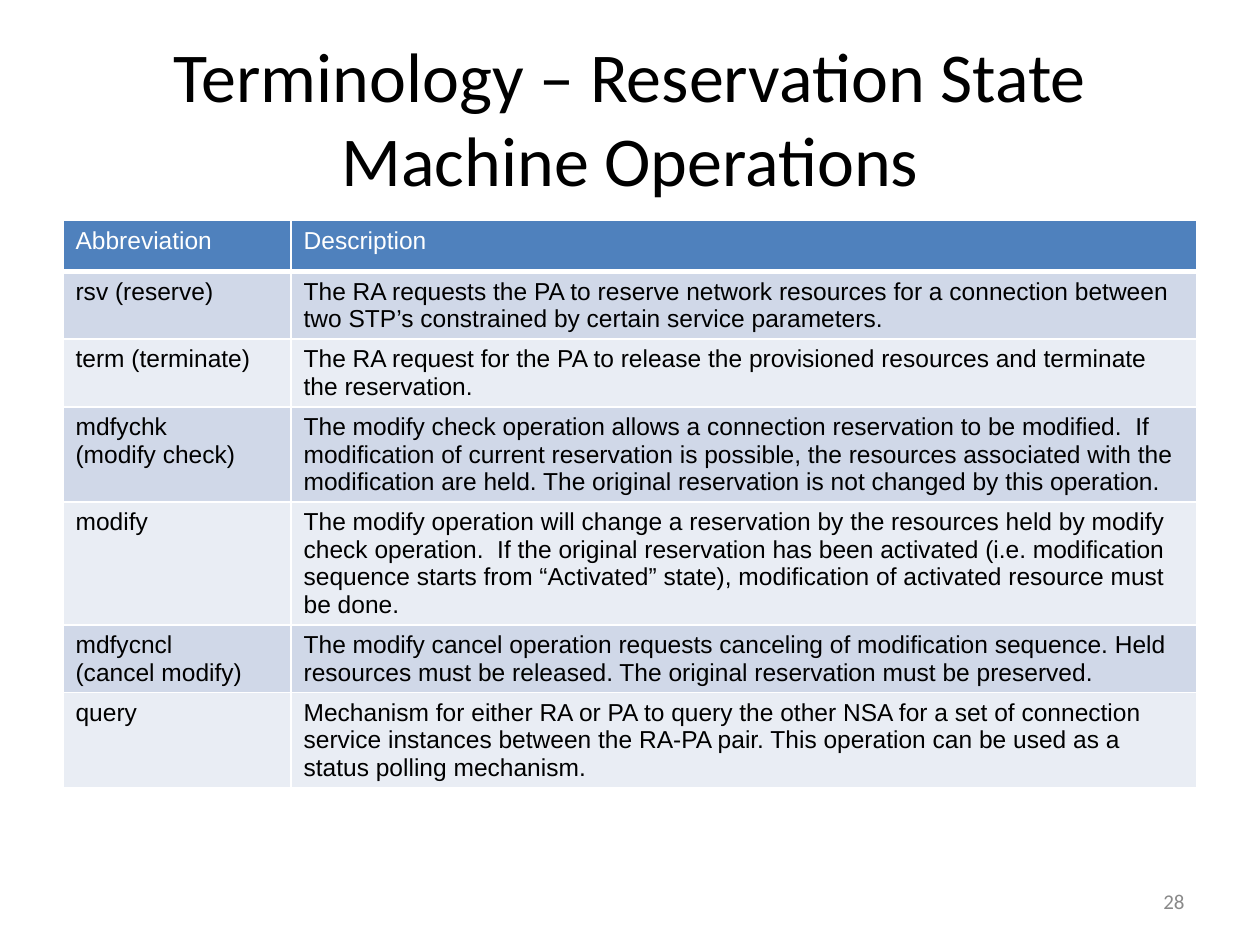
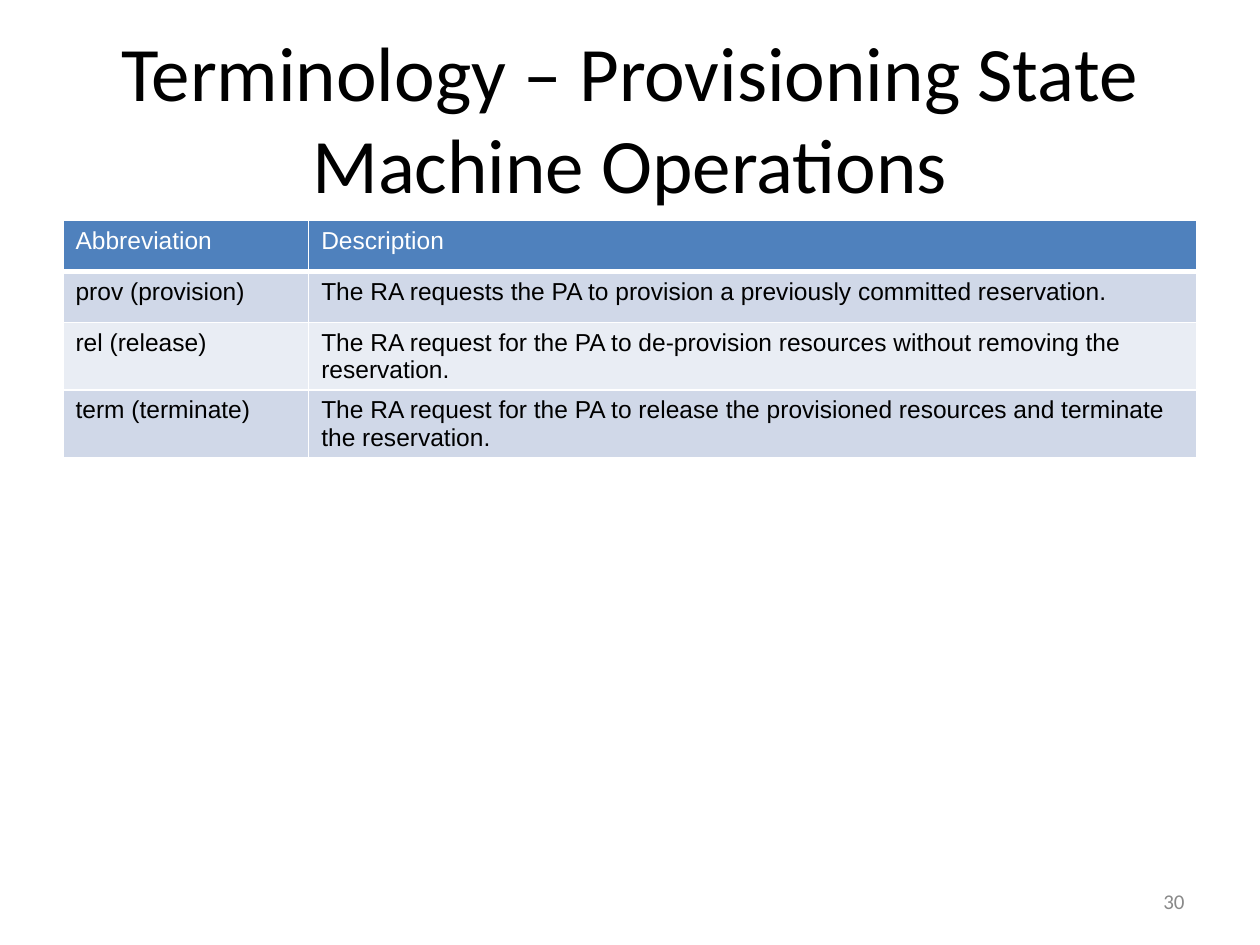
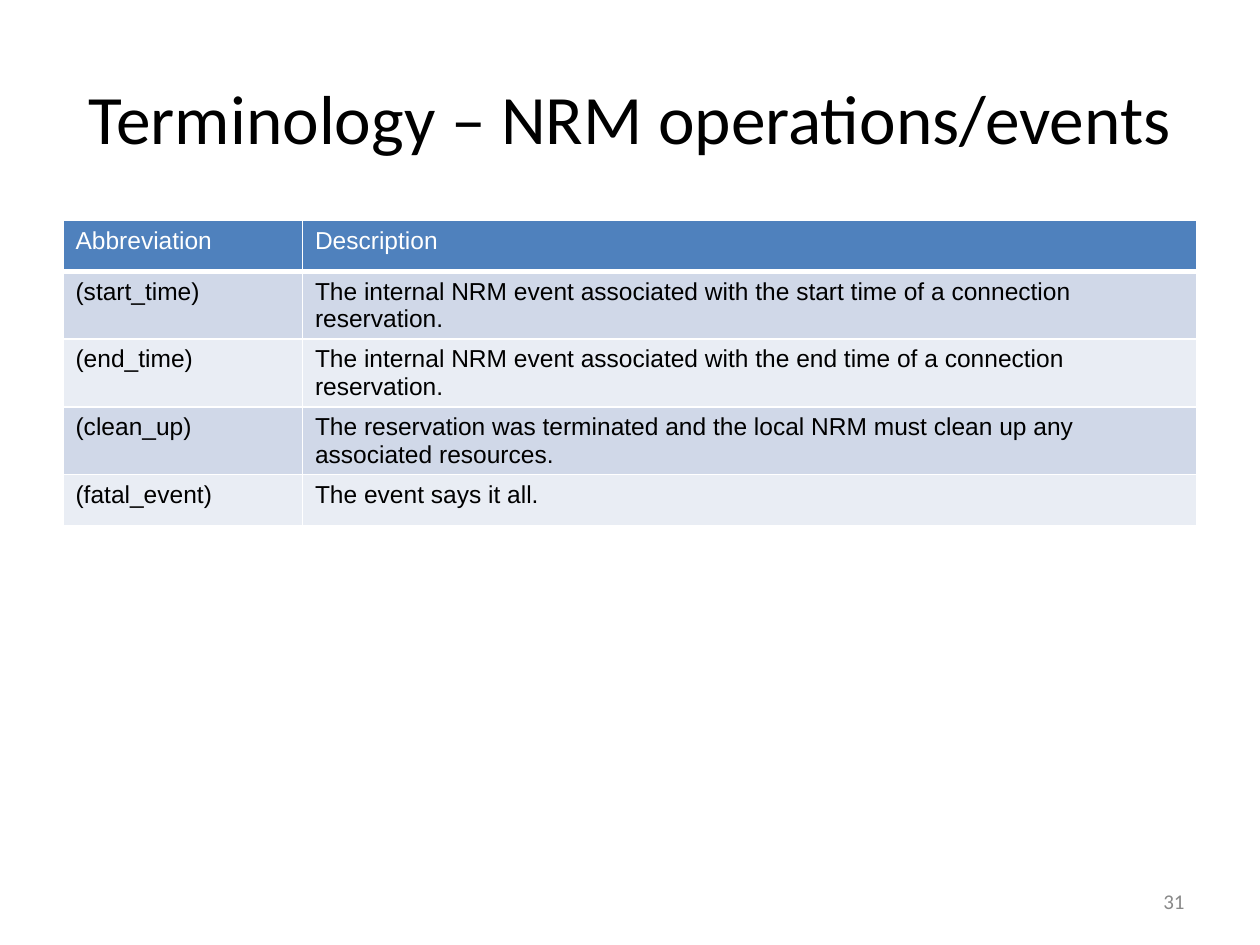
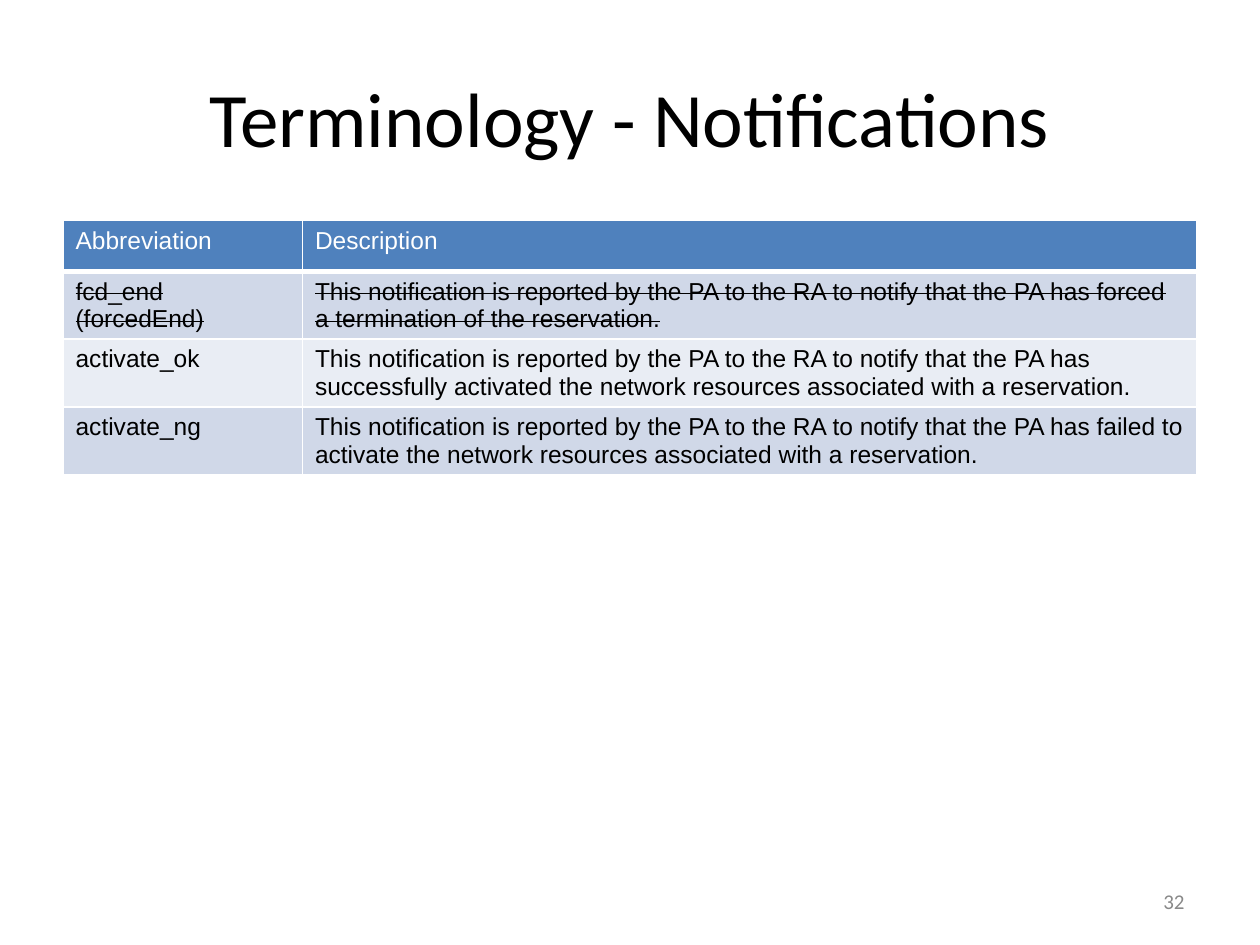
from lxml.etree import SubElement
from pptx import Presentation
from pptx.dml.color import RGBColor
from pptx.enum.text import MSO_ANCHOR, MSO_AUTO_SIZE, PP_ALIGN
from pptx.oxml.ns import qn
from pptx.util import Inches, Pt

COLORS = {
    "text": "000000",
    "white": "FFFFFF",
    "header": "4F81BD",
    "odd_row": "D0D8E8",
    "even_row": "E9EDF4",
    "page_number": "898989",
}
TABLE_WIDTH = 9
ROW_HEIGHT = 0.405
HEADINGS = ("Abbreviation", "Description")
TERMINATE = (
    "term (terminate)",
    "The RA request for the PA to release the provisioned resources and terminate the reservation.",
)

SECTIONS = [
    {
        "title": "Terminology – Reservation State Machine Operations",
        "title_size": 40,
        "page": "28",
        "term_width": 1.81,
        "terms": [
            ("rsv (reserve)",
             "The RA requests the PA to reserve network resources for a connection between two STP’s constrained by certain service parameters."),
            TERMINATE,
            ("mdfychk\n(modify check)",
             "The modify check operation allows a connection reservation to be modified.  If modification of current reservation is possible, the resources associated with the modification are held. The original reservation is not changed by this operation."),
            ("modify",
             "The modify operation will change a reservation by the resources held by modify check operation.  If the original reservation has been activated (i.e. modification sequence starts from “Activated” state), modification of activated resource must be done."),
            ("mdfycncl\n(cancel modify)",
             "The modify cancel operation requests canceling of modification sequence. Held resources must be released. The original reservation must be preserved."),
            ("query",
             "Mechanism for either RA or PA to query the other NSA for a set of connection service instances between the RA-PA pair. This operation can be used as a status polling mechanism."),
        ],
    },
    {
        "title": "Terminology – Provisioning State Machine Operations",
        "title_size": 44,
        "page": "30",
        "term_width": 1.95,
        "terms": [
            ("prov (provision)",
             "The RA requests the PA to provision a previously committed reservation."),
            ("rel (release)",
             "The RA request for the PA to de-provision resources without removing the reservation."),
            TERMINATE,
        ],
    },
    {
        "title": "Terminology – NRM operations/events",
        "title_size": 39.6,
        "page": "31",
        "term_width": 1.9,
        "terms": [
            ("(start_time)",
             "The internal NRM event associated with the start time of a connection reservation."),
            ("(end_time)",
             "The internal NRM event associated with the end time of a connection reservation."),
            ("(clean_up)",
             "The reservation was terminated and the local NRM must clean up any associated resources."),
            ("(fatal_event)", "The event says it all."),
        ],
    },
    {
        "title": "Terminology - Notifications",
        "title_size": 44,
        "page": "32",
        "term_width": 1.9,
        "withdrawn": {"fcd_end (forcedEnd)"},
        "terms": [
            ("fcd_end (forcedEnd)",
             "This notification is reported by the PA to the RA to notify that the PA has forced a termination of the reservation."),
            ("activate_ok",
             "This notification is reported by the PA to the RA to notify that the PA has successfully activated the network resources associated with a reservation."),
            ("activate_ng",
             "This notification is reported by the PA to the RA to notify that the PA has failed to activate the network resources associated with a reservation."),
        ],
    },
]


def write(frame, text, size=14, font="Arial", color="text", align=PP_ALIGN.LEFT, strike=False):
    frame.text = text
    for paragraph in frame.paragraphs:
        paragraph.alignment = align
        for run in paragraph.runs:
            run.font.name = font
            run.font.size = Pt(size)
            run.font.bold = False
            run.font.color.rgb = RGBColor.from_string(COLORS[color])
            if strike:
                run.font._element.set("strike", "sngStrike")


def style_cell(cell, fill, bottom_width):
    properties = cell._tc.get_or_add_tcPr()
    for side, width in (("L", 1), ("R", 1), ("T", 1), ("B", bottom_width)):
        border = SubElement(properties, qn(f"a:ln{side}"), w=str(Pt(width)))
        border_fill = SubElement(border, qn("a:solidFill"))
        SubElement(border_fill, qn("a:srgbClr"), val=COLORS["white"])
    cell.fill.solid()
    cell.fill.fore_color.rgb = RGBColor.from_string(COLORS[fill])


deck = Presentation()
deck.slide_width = Inches(10)
deck.slide_height = Inches(7.5)
title_only = deck.slide_layouts[5]

for section in SECTIONS:
    slide = deck.slides.add_slide(title_only)

    title = slide.shapes.title
    title.left, title.top = Inches(0.5), Inches(0.3)
    title.width, title.height = Inches(9), Inches(1.25)
    title.text_frame.auto_size = MSO_AUTO_SIZE.NONE
    title.text_frame.vertical_anchor = MSO_ANCHOR.MIDDLE
    write(title.text_frame, section["title"], size=section["title_size"],
          font="Calibri", align=PP_ALIGN.CENTER)

    entries = [HEADINGS] + section["terms"]
    glossary = slide.shapes.add_table(
        len(entries), 2, Inches(0.5), Inches(1.75),
        Inches(TABLE_WIDTH), Inches(ROW_HEIGHT * len(entries))).table
    glossary.columns[0].width = Inches(section["term_width"])
    glossary.columns[1].width = Inches(TABLE_WIDTH - section["term_width"])

    for row, entry in enumerate(entries):
        is_header = row == 0
        band = "header" if is_header else "odd_row" if row % 2 else "even_row"
        withdrawn = entry[0] in section.get("withdrawn", ())
        for column, text in enumerate(entry):
            cell = glossary.cell(row, column)
            style_cell(cell, band, bottom_width=3 if is_header else 1)
            write(cell.text_frame, text, color="white" if is_header else "text",
                  strike=withdrawn)

    page_number = slide.shapes.add_textbox(Inches(7.17), Inches(6.95), Inches(2.33), Inches(0.4))
    page_number.text_frame.word_wrap = True
    page_number.text_frame.vertical_anchor = MSO_ANCHOR.MIDDLE
    write(page_number.text_frame, section["page"], size=12, font="Calibri",
          color="page_number", align=PP_ALIGN.RIGHT)

deck.save("out.pptx")
